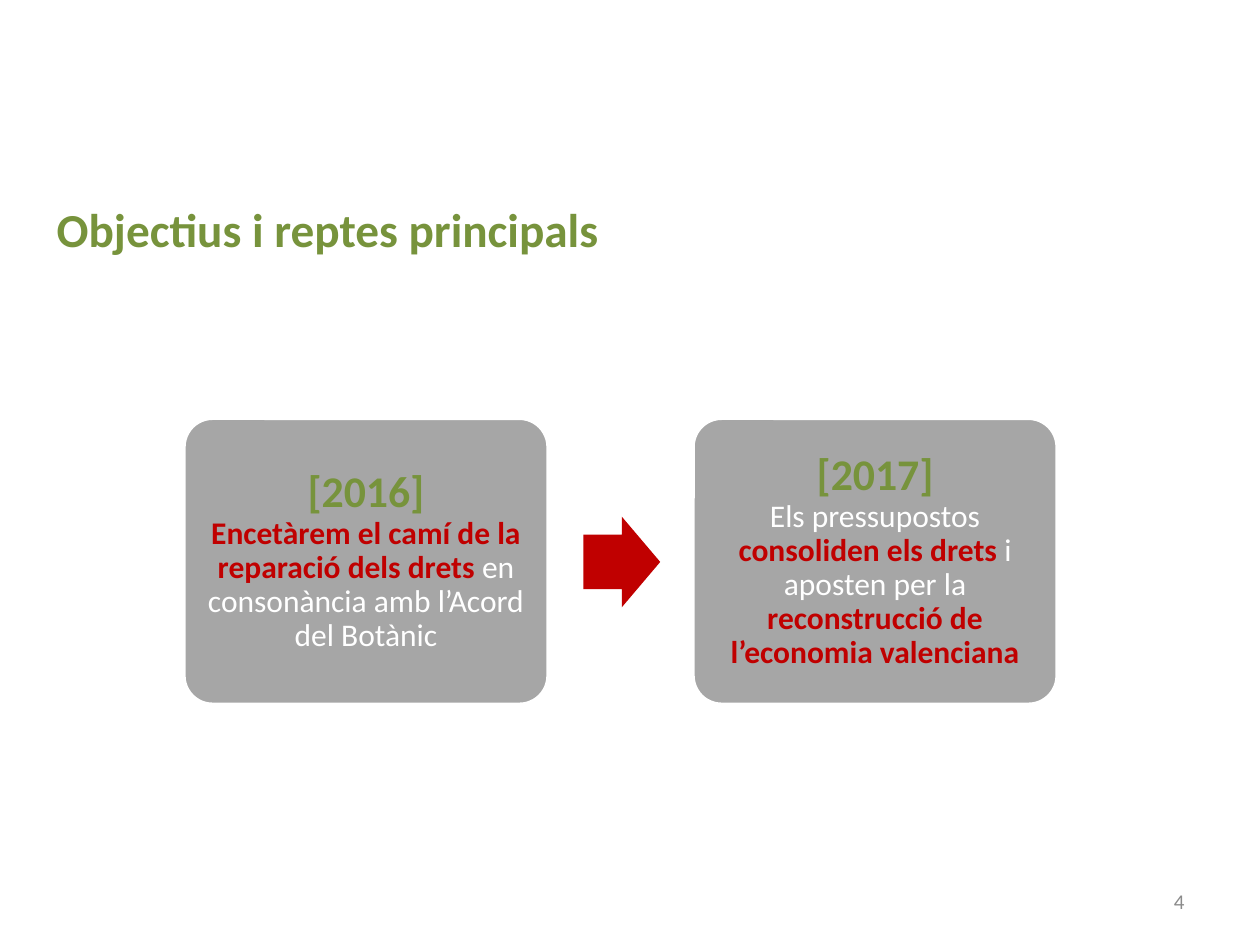
from pptx import Presentation
from pptx.dml.color import RGBColor
from pptx.enum.shapes import MSO_SHAPE as Shape
from pptx.enum.text import MSO_ANCHOR as Anchor, PP_ALIGN as Align
from pptx.util import Inches, Pt

GREEN, RED, GREY, WHITE = "77933C", "C00000", "A6A6A6", "FFFFFF"
TOP, WIDE, HIGH = 3.32, 2.89, 2.27
CARDS = [
    (1.46, "[2016]", [
        ("Encetàrem el camí de la reparació dels drets ", True),
        ("en consonància amb l’Acord del Botànic", False)]),
    (5.5, "[2017]", [
        ("Els pressupostos ", False),
        ("consoliden els drets ", True),
        ("i aposten per la ", False),
        ("reconstrucció de l’economia valenciana", True)]),
]


def paint(color, code):
    """Set a color format from a hex string."""
    color.rgb = RGBColor.from_string(code)


def write(para, text, size=18, color=WHITE, bold=False):
    """Add one formatted run to a paragraph."""
    run = para.add_run()
    run.text = text
    run.font.name, run.font.size, run.font.bold = "Calibri", Pt(size), bold
    paint(run.font.color, color)


def place(item, x, y, wide, high):
    """Set the place and size of an item."""
    item.left, item.top = Inches(x), Inches(y)
    item.width, item.height = Inches(wide), Inches(high)


def frame(item, anchor, side=0.1, edge=0.05):
    """Set up wrapping, anchor and margins, and return the text frame."""
    body = item.text_frame
    body.word_wrap, body.vertical_anchor = True, anchor
    body.margin_left = body.margin_right = Inches(side)
    body.margin_top = body.margin_bottom = Inches(edge)
    return body


def draw(slide, kind, box, fill, adjust):
    """Add a filled preset shape without line or shadow."""
    item = slide.shapes.add_shape(kind, *map(Inches, box))
    item.shadow.inherit = False
    item.fill.solid()
    paint(item.fill.fore_color, fill)
    item.line.fill.background()
    for i, value in enumerate(adjust):
        item.adjustments[i] = value
    return item


def add_card(slide, x, year, parts):
    """Add a rounded card with a year and a statement."""
    card = draw(slide, Shape.ROUNDED_RECTANGLE, (x, TOP, WIDE, HIGH), GREY, [0.1])
    paint(card.line.color, WHITE)
    card.line.width = Pt(2)
    body = frame(card, Anchor.MIDDLE, edge=0.1)
    head, text = body.paragraphs[0], body.add_paragraph()
    for para in (head, text):
        para.alignment, para.line_spacing = Align.CENTER, 0.9
    write(head, year, size=25, color=GREEN, bold=True)
    for words, strong in parts:
        write(text, words, color=RED if strong else WHITE, bold=strong)


def add_title(slide, text):
    """Move and fill the title placeholder."""
    title = slide.shapes.title
    place(title, 0.35, 1.54, 5.91, 0.55)
    para = frame(title, Anchor.TOP).paragraphs[0]
    para.alignment = Align.LEFT
    write(para, text, size=27, color=GREEN, bold=True)


def add_number(slide, text):
    """Add the page number."""
    box = slide.shapes.add_textbox(*map(Inches, (7.17, 6.95, 2.33, 0.4)))
    para = frame(box, Anchor.MIDDLE).paragraphs[0]
    para.alignment = Align.RIGHT
    write(para, text, size=12, color="8B8B8B")


def main():
    """Build and save the slide."""
    deck = Presentation()
    deck.slide_width, deck.slide_height = Inches(10), Inches(7.5)
    slide = deck.slides.add_slide(deck.slide_layouts[5])
    add_title(slide, "Objectius i reptes principals")
    for card in CARDS:
        add_card(slide, *card)
    draw(slide, Shape.RIGHT_ARROW, (4.63, 4.1, 0.61, 0.72), RED, [0.6, 0.5])
    add_number(slide, "4")
    deck.save("out.pptx")


if __name__ == "__main__":
    main()
